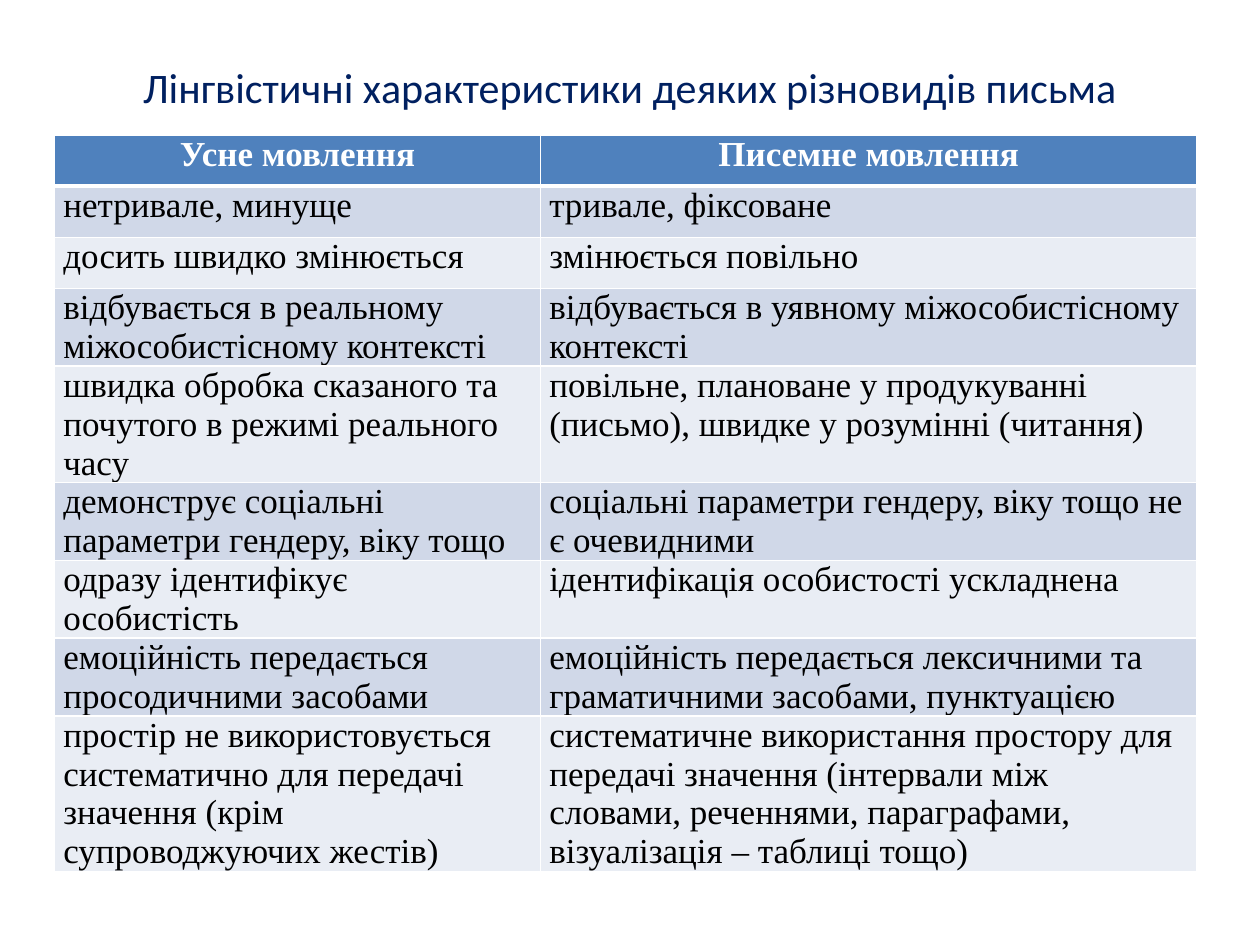
from lxml.etree import SubElement
from pptx import Presentation
from pptx.dml.color import RGBColor
from pptx.enum.text import MSO_ANCHOR, PP_ALIGN
from pptx.oxml.ns import qn
from pptx.util import Pt

HUES = {
    "navy": "002060",
    "head": "4F81BD",
    "dark": "D0D8E8",
    "light": "E9EDF4",
    "white": "FFFFFF",
    "black": "000000",
}

TITLE = "Лінгвістичні характеристики деяких різновидів письма"
ROWS = [
    ("Усне мовлення", "Писемне мовлення"),
    ("нетривале, минуще", "тривале, фіксоване"),
    ("досить швидко змінюється", "змінюється повільно"),
    ("відбувається в реальному міжособистісному контексті",
     "відбувається в уявному міжособистісному контексті"),
    ("швидка обробка сказаного та почутого в режимі реального часу",
     "повільне, плановане у продукуванні (письмо), швидке у розумінні (читання)"),
    ("демонструє соціальні параметри гендеру, віку тощо",
     "соціальні параметри гендеру, віку тощо не є очевидними"),
    ("одразу ідентифікує особистість", "ідентифікація особистості ускладнена"),
    ("емоційність передається просодичними засобами",
     "емоційність передається лексичними та граматичними засобами, пунктуацією"),
    ("простір не використовується систематично для передачі значення "
     "(крім супроводжуючих жестів)",
     "систематичне використання простору для передачі значення (інтервали між "
     "словами, реченнями, параграфами, візуалізація – таблиці тощо)"),
]


def assign(item, values):
    for name, value in values.items():
        setattr(item, name, value)


class Deck:
    def __init__(self, width, height):
        self.deck = Presentation()
        assign(self.deck, {"slide_width": Pt(width), "slide_height": Pt(height)})
        self.slide = self.deck.slides.add_slide(self.deck.slide_layouts[5])
        self.pad = {"margin_left": Pt(5), "margin_right": Pt(5),
                    "margin_top": 0, "margin_bottom": 0}

    def text(self, frame, words, hue, align, **font):
        para = frame.paragraphs[0]
        para.alignment = align
        run = para.add_run()
        run.text = words
        assign(run.font, font)
        run.font.color.rgb = RGBColor.from_string(HUES[hue])

    def title(self, words, left, top, width, height):
        shape = self.slide.shapes.title
        assign(shape, {"left": Pt(left), "top": Pt(top),
                       "width": Pt(width), "height": Pt(height)})
        shape.text_frame.vertical_anchor = MSO_ANCHOR.MIDDLE
        self.text(shape.text_frame, words, "navy", PP_ALIGN.CENTER,
                  name="Calibri", size=Pt(24))

    def edge(self, cell, side, weight):
        props = cell._tc.get_or_add_tcPr()
        line = SubElement(props, qn(f"a:ln{side}"), w=str(Pt(weight)))
        fill = SubElement(line, qn("a:solidFill"))
        SubElement(fill, qn("a:srgbClr"), val=HUES["white"])

    def cell(self, cell, words, row):
        head = row == 0
        assign(cell, self.pad)
        for side in "LRTB":
            thick = (head and side == "B") or (row == 1 and side == "T")
            self.edge(cell, side, 3 if thick else 1)
        band = "head" if head else "dark" if row % 2 else "light"
        cell.fill.solid()
        cell.fill.fore_color.rgb = RGBColor.from_string(HUES[band])
        self.text(cell.text_frame, words, "white" if head else "black",
                  PP_ALIGN.CENTER if head else PP_ALIGN.LEFT,
                  name="Times New Roman", size=Pt(20), bold=head)

    def table(self, rows, left, top, widths, height):
        """Rows start at an equal height and grow with their text."""
        grid = self.slide.shapes.add_table(
            len(rows), len(widths), Pt(left), Pt(top),
            Pt(sum(widths)), Pt(height * len(rows))).table
        for col, width in zip(grid.columns, widths):
            col.width = Pt(width)
        for row, pair in enumerate(rows):
            for col, words in enumerate(pair):
                self.cell(grid.cell(row, col), words, row)


def main():
    page = Deck(720, 540)
    page.title(TITLE, 36, 21.6, 648, 55.4)
    page.table(ROWS, 31.2, 77.2, (277.7, 375), 29.2)
    page.deck.save("out.pptx")


if __name__ == "__main__":
    main()
